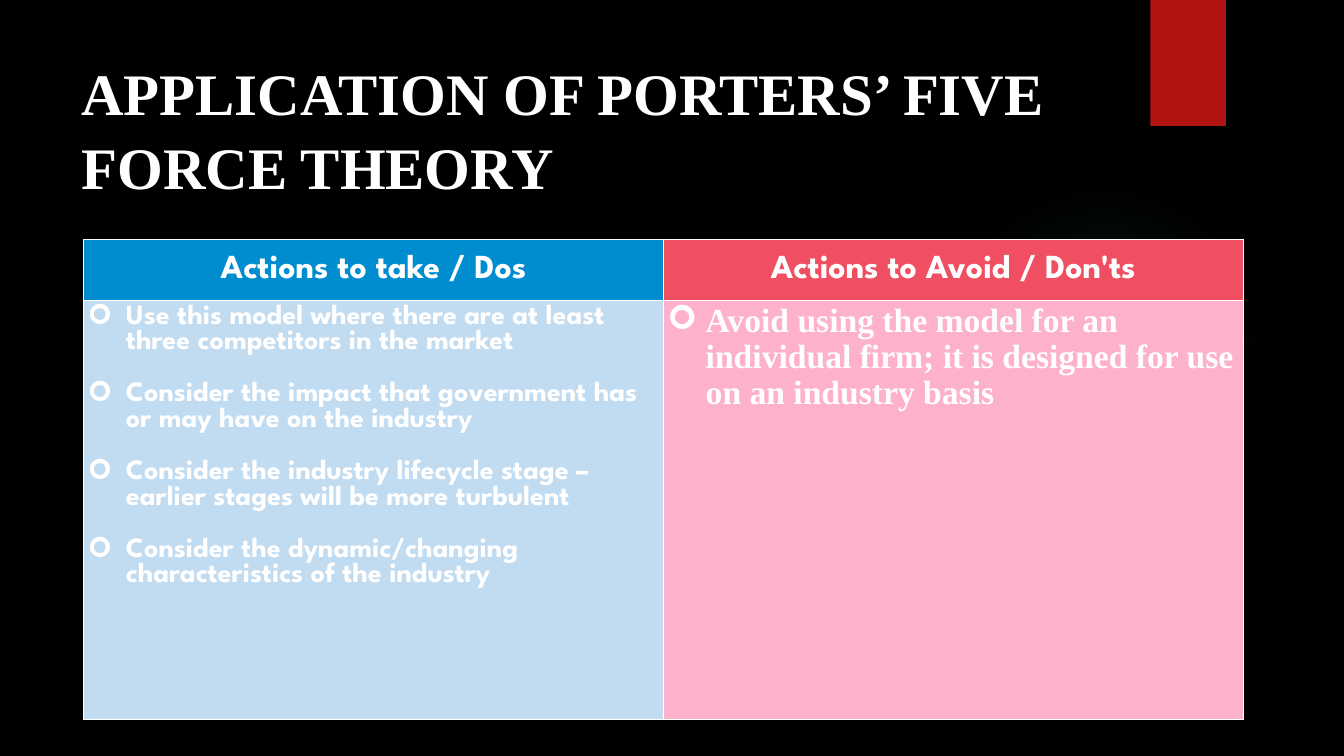
from lxml.etree import SubElement
from pptx import Presentation
from pptx.dml.color import RGBColor
from pptx.enum.shapes import MSO_SHAPE
from pptx.enum.text import MSO_ANCHOR, PP_ALIGN
from pptx.oxml.ns import qn
from pptx.util import Inches, Pt

BLACK = RGBColor(0x00, 0x00, 0x00)
WHITE = RGBColor(0xFF, 0xFF, 0xFF)
RED = RGBColor(0xB0, 0x15, 0x13)
TEAL = RGBColor(0x50, 0xB9, 0xC1)
BLUE = RGBColor(0x00, 0x8D, 0xD0)
CORAL = RGBColor(0xF0, 0x4E, 0x61)
PALE_BLUE = RGBColor(0xC1, 0xDB, 0xF1)
PINK = RGBColor(0xFD, 0xB1, 0xCB)
SERIF = "Times New Roman"
SANS = "League Spartan"

DOS = [
    "Use this model where there are at least three competitors in the market",
    "Consider the impact that government has or may have on the industry",
    "Consider the industry lifecycle stage – earlier stages will be more turbulent",
    "Consider the dynamic/changing characteristics of the industry",
]
DONTS = ["Avoid using the model for an individual firm; it is designed for use on an industry basis"]


def add_plain_shape(slide, kind, left, top, width, height, color):
    """Add a flat shape without outline or shadow."""
    shape = slide.shapes.add_shape(kind, Inches(left), Inches(top), Inches(width), Inches(height))
    shape.shadow.inherit = False
    shape.fill.solid()
    shape.fill.fore_color.rgb = color
    shape.line.fill.background()
    return shape


def add_glow(slide):
    """Add the faint circle that fades out towards its edge."""
    glow = add_plain_shape(slide, MSO_SHAPE.OVAL, 9.41, 1.83, 3.08, 3.08, TEAL)
    glow.fill.gradient()
    gradient = glow.fill._fill._gradFill
    for child in list(gradient):
        gradient.remove(child)
    stops = SubElement(gradient, qn("a:gsLst"))
    for position, opacity in ((0, 7), (36, 6), (69, 0)):
        stop = SubElement(stops, qn("a:gs"), pos=str(position * 1000))
        color = SubElement(stop, qn("a:srgbClr"), val=str(TEAL))
        SubElement(color, qn("a:alpha"), val=str(opacity * 1000))
    circle = SubElement(gradient, qn("a:path"), path="circle")
    SubElement(circle, qn("a:fillToRect"), l="50000", t="50000", r="50000", b="50000")


def add_bold_run(paragraph, text, size, font):
    """Add a bold white run."""
    run = paragraph.add_run()
    run.text = text
    run.font.size = Pt(size)
    run.font.name = font
    run.font.bold = True
    run.font.color.rgb = WHITE


def add_title(slide, text):
    """Add the slide heading."""
    title = slide.shapes.add_textbox(Inches(0.71), Inches(0.5), Inches(10.29), Inches(1.53))
    frame = title.text_frame
    frame.word_wrap = True
    frame.vertical_anchor = MSO_ANCHOR.MIDDLE
    heading = frame.paragraphs[0]
    heading.line_spacing = 1.05
    add_bold_run(heading, text, 42, SERIF)


def prepare_cell(cell, color):
    """Fill a cell and set its margins."""
    cell.fill.solid()
    cell.fill.fore_color.rgb = color
    cell.margin_left = cell.margin_right = Inches(0.04)
    cell.margin_top = cell.margin_bottom = Inches(0.04)


def fill_header(cell, text, color):
    """Write a centred column heading."""
    prepare_cell(cell, color)
    cell.vertical_anchor = MSO_ANCHOR.MIDDLE
    heading = cell.text_frame.paragraphs[0]
    heading.alignment = PP_ALIGN.CENTER
    add_bold_run(heading, text, 24, SANS)


def fill_bullets(cell, actions, color, size, font, spacing):
    """Write a list of actions with arrow bullets."""
    prepare_cell(cell, color)
    frame = cell.text_frame
    for index, action in enumerate(actions):
        item = frame.paragraphs[0] if index == 0 else frame.add_paragraph()
        properties = item._p.get_or_add_pPr()
        properties.set("marL", str(Inches(0.38)))
        properties.set("indent", str(-Inches(0.38)))
        SubElement(properties, qn("a:buFont"), typeface="Wingdings")
        SubElement(properties, qn("a:buChar"), char="➢")
        item.line_spacing = spacing
        if index:
            item.space_before = Pt(18.5)
        add_bold_run(item, action, size, font)


def add_actions_table(slide):
    """Add the two-column table of dos and don'ts."""
    table = slide.shapes.add_table(
        2, 2, Inches(0.83), Inches(2.38), Inches(11.5), Inches(4.76)
    ).table
    table.rows[0].height = Inches(0.6)
    table.rows[1].height = Inches(4.16)
    fill_header(table.cell(0, 0), "Actions to take / Dos", BLUE)
    fill_header(table.cell(0, 1), "Actions to Avoid / Don'ts", CORAL)
    fill_bullets(table.cell(1, 0), DOS, PALE_BLUE, 20, SANS, 1.0)
    fill_bullets(table.cell(1, 1), DONTS, PINK, 24, SERIF, 0.96)


def main():
    """Build and save the slide."""
    presentation = Presentation()
    presentation.slide_width = Inches(13.33)
    presentation.slide_height = Inches(7.5)
    slide = presentation.slides.add_slide(presentation.slide_layouts[6])
    slide.background.fill.solid()
    slide.background.fill.fore_color.rgb = BLACK
    add_glow(slide)
    add_plain_shape(slide, MSO_SHAPE.RECTANGLE, 11.41, 0, 0.75, 1.25, RED)
    add_title(slide, "APPLICATION OF PORTERS’ FIVE FORCE THEORY")
    add_actions_table(slide)
    presentation.save("out.pptx")


if __name__ == "__main__":
    main()
